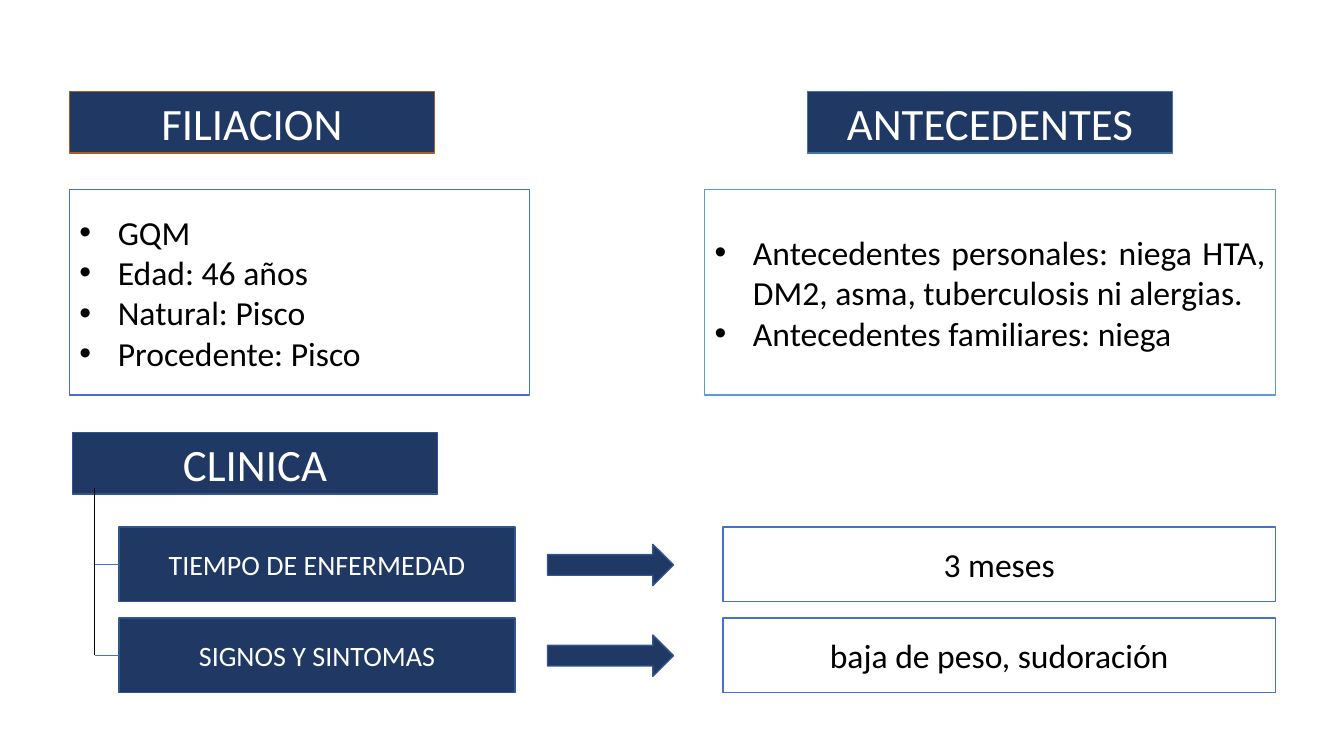
from dataclasses import dataclass

from lxml.etree import SubElement
from pptx import Presentation
from pptx.dml.color import RGBColor
from pptx.enum.shapes import MSO_CONNECTOR, MSO_SHAPE
from pptx.enum.text import MSO_ANCHOR, PP_ALIGN
from pptx.oxml.ns import qn
from pptx.util import Inches, Pt


@dataclass(frozen=True)
class Theme:
    """Colours, font and type sizes of the slide."""
    font: str = "Calibri"
    navy: str = "203864"
    edge: str = "325491"
    blue: str = "4472C4"
    sky: str = "5B9BD5"
    steel: str = "43739E"
    rust: str = "AF5C24"
    white: str = "FFFFFF"
    black: str = "000000"
    head: int = 32
    body: int = 24
    label: int = 20


THEME = Theme()


def add_box(slide, box, fill, line, kind=MSO_SHAPE.RECTANGLE):
    """Add a filled, outlined shape in the box."""
    shape = slide.shapes.add_shape(kind, *map(Inches, box))
    shape.shadow.inherit = False
    shape.fill.solid()
    shape.fill.fore_color.rgb = RGBColor.from_string(fill)
    shape.line.color.rgb = RGBColor.from_string(line)
    shape.line.width = Pt(1)
    return shape


def set_text(shape, lines, size, color, align=PP_ALIGN.CENTER):
    """Write one paragraph per line and format it."""
    frame = shape.text_frame
    frame.word_wrap = True
    frame.vertical_anchor = MSO_ANCHOR.MIDDLE
    frame.text = "\n".join(lines)
    for para in frame.paragraphs:
        para.alignment = align
        for run in para.runs:
            run.font.name = THEME.font
            run.font.size = Pt(size)
            run.font.color.rgb = RGBColor.from_string(color)


def add_head(slide, left, top, text, line):
    """Add a dark section heading."""
    shape = add_box(slide, (left, top, 3.62, 0.61), THEME.navy, line)
    set_text(shape, [text], THEME.head, THEME.white)


def add_list(slide, box, lines, line):
    """Add a framed bullet list."""
    shape = add_box(slide, box, THEME.white, line)
    set_text(shape, lines, THEME.body, THEME.black, PP_ALIGN.JUSTIFY)
    for para in shape.text_frame.paragraphs:
        props = para._p.get_or_add_pPr()
        props.set("marL", str(Inches(0.38)))
        props.set("indent", str(-Inches(0.38)))
        SubElement(props, qn("a:buFont")).set("typeface", "Arial")
        SubElement(props, qn("a:buChar")).set("char", "•")


def add_line(slide, start, end, color):
    """Add a thin straight connector."""
    line = slide.shapes.add_connector(
        MSO_CONNECTOR.STRAIGHT, *map(Inches, (*start, *end)))
    line.line.color.rgb = RGBColor.from_string(color)
    line.line.width = Pt(0.5)
    SubElement(line._element.spPr, qn("a:effectLst"))
    return line


def add_row(slide, box, label, value):
    """Add a label, an arrow and a value across the box."""
    left, top, width, height = box
    mid = top + height / 2
    name = add_box(slide, (left, top, 3.93, height), THEME.navy, THEME.edge)
    set_text(name, [label], THEME.label, THEME.white)
    add_box(slide, (left + 4.25, mid - 0.2, 1.25, 0.41), THEME.navy,
            THEME.edge, MSO_SHAPE.RIGHT_ARROW)
    cell = add_box(slide, (left + width - 5.48, top, 5.48, height),
                   THEME.white, THEME.blue)
    set_text(cell, [value], THEME.body, THEME.black)
    return name


def add_clinic(slide, box, rows):
    """Add the clinical heading with its branching rows."""
    left, top, width, height = box
    add_head(slide, left, top, "CLINICA", THEME.edge)
    deep, step = 0.74, 0.9
    first = top + height - deep - step * (len(rows) - 1)
    stem = left + 0.22
    for index, (label, value) in enumerate(rows):
        high = first + index * step
        mid = high + deep / 2
        name = add_row(slide, (left + 0.46, high, width - 0.46, deep),
                       label, value)
        twig = add_line(slide, (stem, mid), (left + 0.46, mid), THEME.blue)
        twig.end_connect(name, 1)
    add_line(slide, (stem, top + 0.55), (stem, mid), THEME.black)


def main():
    """Build and save the slide."""
    deck = Presentation()
    deck.slide_width, deck.slide_height = Inches(13.33), Inches(7.5)
    slide = deck.slides.add_slide(deck.slide_layouts[6])
    add_list(slide, (0.69, 1.88, 4.56, 2.04),
             ["GQM", "Edad: 46 años", "Natural: Pisco",
              "Procedente: Pisco"], THEME.blue)
    add_list(slide, (6.99, 1.88, 5.66, 2.04),
             ["Antecedentes personales: niega HTA, DM2, asma, "
              "tuberculosis ni alergias.",
              "Antecedentes familiares: niega"], THEME.sky)
    add_head(slide, 0.69, 0.91, "FILIACION", THEME.rust)
    add_head(slide, 8.01, 0.91, "ANTECEDENTES", THEME.steel)
    add_clinic(slide, (0.72, 4.29, 11.93, 2.58),
               [("TIEMPO DE ENFERMEDAD", "3 meses"),
                ("SIGNOS Y SINTOMAS", "baja de peso, sudoración")])
    deck.save("out.pptx")


if __name__ == "__main__":
    main()
